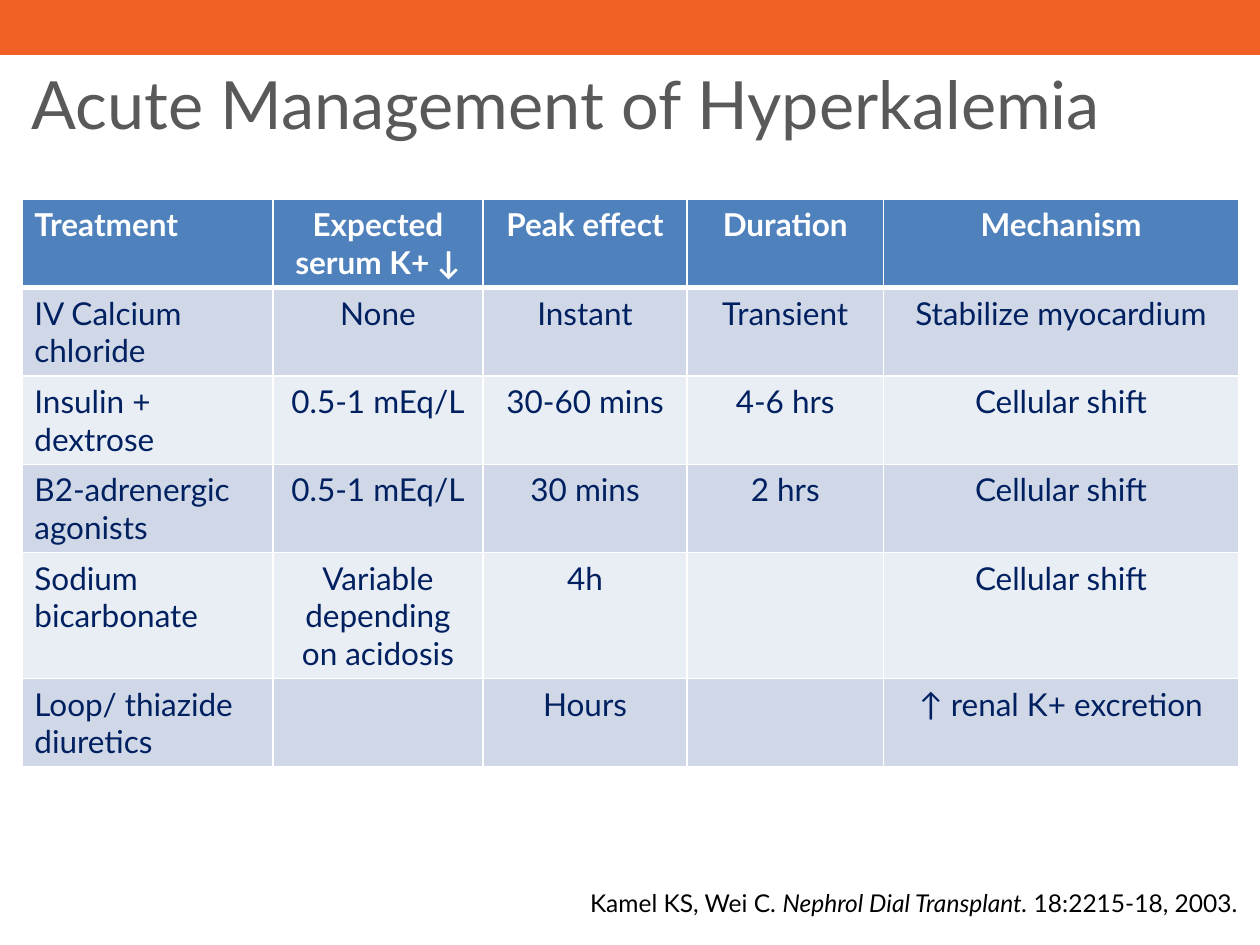
import pptx
import pptx.dml.color
import pptx.enum.shapes
import pptx.enum.text
import pptx.util
from lxml import etree
from pptx.oxml.ns import qn

Cm = pptx.util.Cm
Pt = pptx.util.Pt
RGBColor = pptx.dml.color.RGBColor
PP_ALIGN = pptx.enum.text.PP_ALIGN

ORANGE = RGBColor(0xF1, 0x60, 0x25)
GREY = RGBColor(0x59, 0x59, 0x59)
BLUE = RGBColor(0x4F, 0x81, 0xBD)
NAVY = RGBColor(0x00, 0x20, 0x60)
DARK_BAND = RGBColor(0xD0, 0xD8, 0xE8)
LIGHT_BAND = RGBColor(0xE9, 0xED, 0xF4)
WHITE = RGBColor(0xFF, 0xFF, 0xFF)
BLACK = RGBColor(0x00, 0x00, 0x00)


def format_runs(paragraph, size, color, bold=False):
    for run in paragraph.runs:
        run.font.name = "Lato"
        run.font.size = Pt(size)
        run.font.color.rgb = color
        run.font.bold = bold


def add_border(cell, side, width):
    properties = cell._tc.get_or_add_tcPr()
    line = etree.SubElement(properties, qn("a:" + side), w=str(Pt(width)))
    fill = etree.SubElement(line, qn("a:solidFill"))
    etree.SubElement(fill, qn("a:srgbClr"), val=str(WHITE))


presentation = pptx.Presentation()
presentation.slide_width = Cm(25.4)
presentation.slide_height = Cm(19.05)
slide = presentation.slides.add_slide(presentation.slide_layouts[6])

# Top band
band = slide.shapes.add_shape(
    pptx.enum.shapes.MSO_SHAPE.RECTANGLE, Cm(0), Cm(0), Cm(25.4), Cm(1.07))
band.shadow.inherit = False
band.fill.solid()
band.fill.fore_color.rgb = ORANGE
band.line.color.rgb = ORANGE
band.line.width = Pt(2)

# Title
title = slide.shapes.add_textbox(Cm(0.64), Cm(1.27), Cm(22.86), Cm(2.46))
frame = title.text_frame
frame.word_wrap = True
frame.margin_left = frame.margin_right = Cm(0)
frame.margin_top = frame.margin_bottom = Cm(0)
frame.text = "Acute Management of Hyperkalemia"
format_runs(frame.paragraphs[0], 38, GREY)

# Treatment table
treatments = [
    ["Treatment", "Expected serum K+ ↓", "Peak effect", "Duration", "Mechanism"],
    ["IV Calcium chloride", "None", "Instant", "Transient", "Stabilize myocardium"],
    ["Insulin + dextrose", "0.5-1 mEq/L", "30-60 mins", "4-6 hrs", "Cellular shift"],
    ["B2-adrenergic agonists", "0.5-1 mEq/L", "30 mins", "2 hrs", "Cellular shift"],
    ["Sodium bicarbonate", "Variable depending on acidosis", "4h", "", "Cellular shift"],
    ["Loop/ thiazide diuretics", "", "Hours", "", "↑ renal K+ excretion"],
]
column_widths = [5.06, 4.24, 4.11, 3.96, 7.16]
row_heights = [1.78, 1.78, 1.78, 1.78, 2.54, 1.78]
table = slide.shapes.add_table(
    len(row_heights), len(column_widths), Cm(0.44), Cm(4.02),
    Cm(sum(column_widths)), Cm(sum(row_heights))).table
for column, width in zip(table.columns, column_widths):
    column.width = Cm(width)

for row_index, texts in enumerate(treatments):
    table.rows[row_index].height = Cm(row_heights[row_index])
    is_header = row_index == 0
    if is_header:
        background = BLUE
    else:
        background = DARK_BAND if row_index % 2 else LIGHT_BAND
    for column_index, text in enumerate(texts):
        cell = table.cell(row_index, column_index)
        add_border(cell, "lnL", 1)
        add_border(cell, "lnR", 1)
        add_border(cell, "lnT", 3 if row_index == 1 else 1)
        add_border(cell, "lnB", 3 if is_header else 1)
        cell.fill.solid()
        cell.fill.fore_color.rgb = background
        cell.text_frame.text = text
        paragraph = cell.text_frame.paragraphs[0]
        paragraph.alignment = PP_ALIGN.CENTER if column_index else PP_ALIGN.LEFT
        format_runs(paragraph, 18, WHITE if is_header else NAVY, is_header)

# Citation
citation = slide.shapes.add_textbox(Cm(10.8), Cm(17.78), Cm(14.4), Cm(0.86))
citation.text_frame.word_wrap = True
paragraph = citation.text_frame.paragraphs[0]
paragraph.alignment = PP_ALIGN.RIGHT
for text, italic in [("Kamel KS, Wei C. ", False),
                     ("Nephrol Dial Transplant. ", True),
                     ("18:2215-18, 2003.", False)]:
    run = paragraph.add_run()
    run.text = text
    run.font.italic = italic
format_runs(paragraph, 14, BLACK)

presentation.save("out.pptx")
